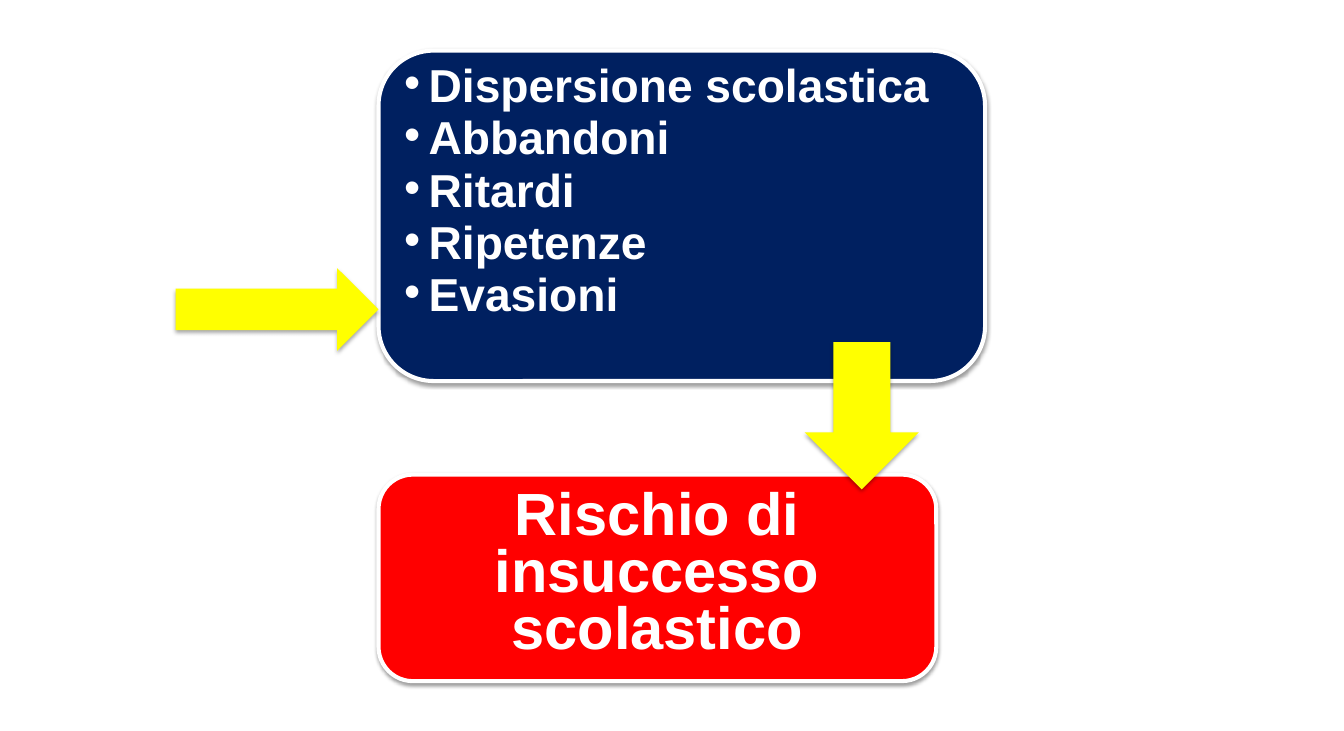
import dataclasses

import pptx
import pptx.dml.color
import pptx.enum.shapes
import pptx.enum.text
import pptx.oxml.ns
import pptx.slide
import pptx.text.text
import pptx.util
from lxml import etree

Pt = pptx.util.Pt
Kind = pptx.enum.shapes.MSO_SHAPE
Align = pptx.enum.text.PP_ALIGN
qn = pptx.oxml.ns.qn

WHITE, NAVY, RED, YELLOW = "FFFFFF", "002060", "FF0000", "FFFF00"
INDENT = Pt(18)


@dataclasses.dataclass
class Box:
    left: float
    top: float
    width: float
    height: float
    fill: str
    lines: list[str]
    size: float
    space: float
    listed: bool = False


@dataclasses.dataclass
class Arrow:
    left: float
    top: float
    width: float
    height: float
    turn: float = 0


def color(code: str) -> pptx.dml.color.RGBColor:
    return pptx.dml.color.RGBColor.from_string(code)


def add_shade(shape, alpha: int, dist: float) -> None:
    """Give the shape a soft black shadow that falls downwards."""
    shape.shadow.inherit = False
    effect = shape._element.spPr.find(qn("a:effectLst"))
    shade = etree.SubElement(effect, qn("a:outerShdw"), {
        "blurRad": str(Pt(3.1)), "dist": str(Pt(dist)),
        "dir": "5400000", "rotWithShape": "0"})
    black = etree.SubElement(shade, qn("a:srgbClr"), val="000000")
    etree.SubElement(black, qn("a:alpha"), val=str(alpha * 1000))


def add_bullet(para: pptx.text.text._Paragraph) -> None:
    props = para._p.get_or_add_pPr()
    props.set("marL", str(INDENT))
    props.set("indent", str(-INDENT))
    etree.SubElement(props, qn("a:buFont"), typeface="Arial")
    etree.SubElement(props, qn("a:buChar"), char="•")


def draw_box(slide: pptx.slide.Slide, box: Box) -> None:
    shape = slide.shapes.add_shape(
        Kind.ROUNDED_RECTANGLE,
        Pt(box.left), Pt(box.top), Pt(box.width), Pt(box.height))
    shape.fill.solid()
    shape.fill.fore_color.rgb = color(box.fill)
    shape.line.color.rgb = color(WHITE)
    shape.line.width = Pt(3)
    add_shade(shape, 38, 1.6)

    frame = shape.text_frame
    frame.word_wrap = True
    frame.vertical_anchor = pptx.enum.text.MSO_ANCHOR.TOP
    layout = {"alignment": Align.LEFT if box.listed else Align.CENTER,
              "line_spacing": box.space, "space_before": Pt(10)}
    style = {"name": "Arial", "size": Pt(box.size), "bold": True}
    for index, line in enumerate(box.lines):
        para = frame.add_paragraph() if index else frame.paragraphs[0]
        for key, value in layout.items():
            setattr(para, key, value)
        if box.listed:
            add_bullet(para)
        run = para.add_run()
        run.text = line
        for key, value in style.items():
            setattr(run.font, key, value)
        run.font.color.rgb = color(WHITE)


def draw_arrow(slide: pptx.slide.Slide, arrow: Arrow) -> None:
    shape = slide.shapes.add_shape(
        Kind.RIGHT_ARROW,
        Pt(arrow.left), Pt(arrow.top), Pt(arrow.width), Pt(arrow.height))
    shape.rotation = arrow.turn
    shape.fill.solid()
    shape.fill.fore_color.rgb = color(YELLOW)
    shape.line.fill.background()
    add_shade(shape, 35, 1.8)


# Content, from back to front
CAUSES = Box(279.4, 37.4, 447.8, 244.1, NAVY,
             ["Dispersione scolastica", "Abbandoni", "Ritardi",
              "Ripetenze", "Evasioni"], 34.1, 0.7, listed=True)
RISK = Box(279.4, 350.6, 411.8, 152.6, RED,
           ["Rischio di insuccesso scolastico"], 44, 0.8)
ENTRY = Arrow(129.6, 198, 149.8, 61.2)
DOWN = Arrow(581.8, 265, 108.7, 84.2, turn=90)


def main() -> None:
    deck = pptx.Presentation()
    deck.slide_width, deck.slide_height = Pt(992.16), Pt(540)
    slide = deck.slides.add_slide(deck.slide_layouts[6])

    # Causes and the arrow into them
    draw_box(slide, CAUSES)
    draw_arrow(slide, ENTRY)

    # Resulting risk and the arrow down to it
    draw_box(slide, RISK)
    draw_arrow(slide, DOWN)

    deck.save("out.pptx")


if __name__ == "__main__":
    main()
